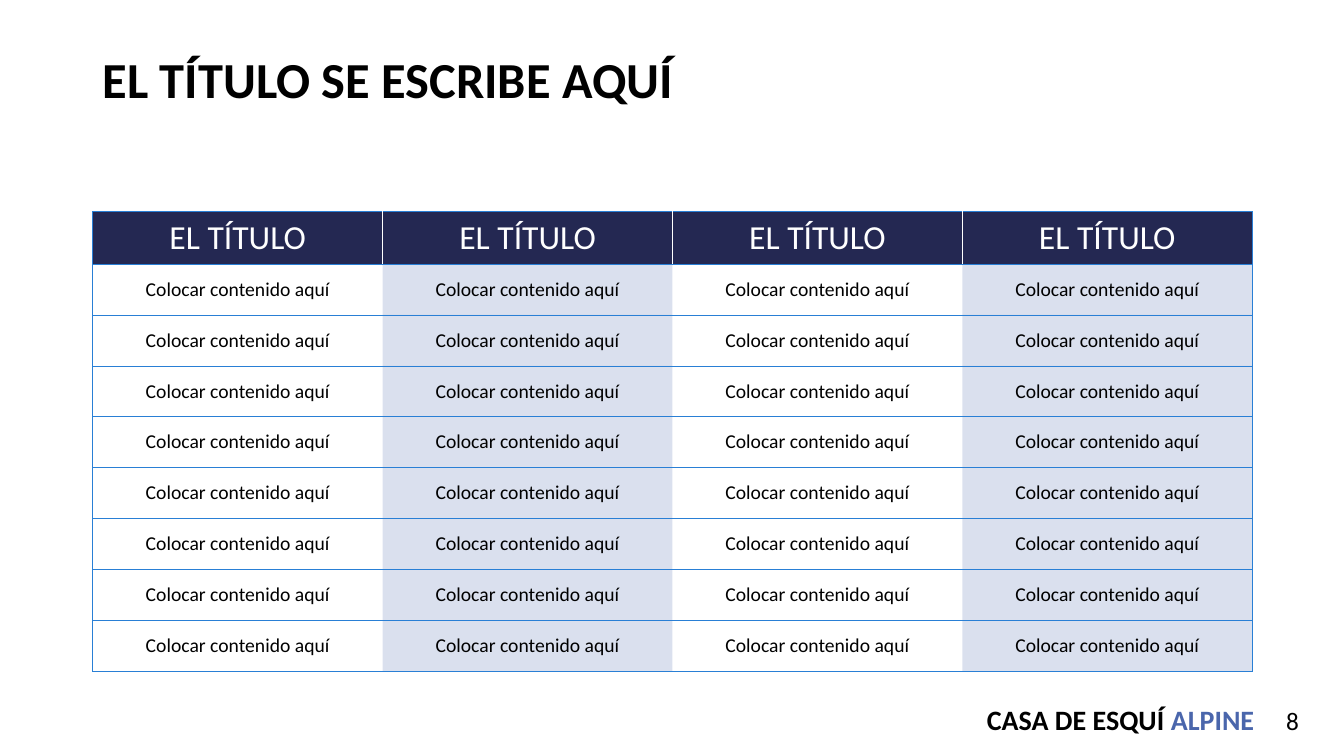
import dataclasses

import pptx
import pptx.dml.color
import pptx.enum.text
import pptx.oxml
import pptx.oxml.ns
import pptx.util

Inches = pptx.util.Inches
Pt = pptx.util.Pt
Align = pptx.enum.text.PP_ALIGN
Anchor = pptx.enum.text.MSO_ANCHOR


@dataclasses.dataclass(frozen=True)
class Theme:
    font: str = "Calibri"
    text: str = "000000"
    light: str = "FFFFFF"
    accent: str = "4A66AC"
    header: str = "242852"
    rule: str = "297FD5"
    tint_percent: int = 20
    title_size: int = 36
    header_size: int = 24
    brand_size: int = 20
    number_size: int = 18
    body_size: int = 14


THEME = Theme()
COLUMNS = 4
BODY_ROWS = 8


def rgb(value):
    return pptx.dml.color.RGBColor.from_string(value)


def add_span(para, text, size, color=THEME.text, bold=False):
    span = para.add_run()
    span.text = text
    formats = {"name": THEME.font, "size": Pt(size), "bold": bold}
    for name, value in formats.items():
        setattr(span.font, name, value)
    span.font.color.rgb = rgb(color)


def add_text_box(page, box, spans, **formats):
    """Place one paragraph made of (text, size, color, bold) spans."""
    frame = page.shapes.add_textbox(*map(Inches, box)).text_frame
    alignment = formats.pop("alignment", Align.LEFT)
    for name, value in {"word_wrap": True, **formats}.items():
        setattr(frame, name, value)
    para = frame.paragraphs[0]
    para.alignment = alignment
    for span in spans:
        add_span(para, *span)
    return para


def add_title(page, box):
    para = add_text_box(
        page, box,
        [("EL TÍTULO SE ESCRIBE AQUÍ", THEME.title_size, THEME.text, True)],
        vertical_anchor=Anchor.MIDDLE)
    para.line_spacing = 0.9


def set_border(cell, side, color=None, width=0.5):
    """Draw one side (L, R, T or B) of a cell, or clear it without a color."""
    paint = "<a:noFill/>"
    if color:
        paint = f'<a:solidFill><a:srgbClr val="{color}"/></a:solidFill>'
    namespace = pptx.oxml.ns.nsdecls("a")
    cell._tc.get_or_add_tcPr().append(pptx.oxml.parse_xml(
        f'<a:ln{side} {namespace} w="{Pt(width)}">{paint}</a:ln{side}>'))


def set_borders(cell, row, column):
    inner = (THEME.light, 1) if row == 0 else (None,)
    outer = (THEME.rule,)
    set_border(cell, "L", *(outer if column == 0 else inner))
    set_border(cell, "R", *(outer if column == COLUMNS - 1 else inner))
    set_border(cell, "T", *outer)
    set_border(cell, "B", *outer)


def fill_cell(cell, row, column):
    if row > 0 and column % 2 == 0:
        cell.fill.background()
        return
    cell.fill.solid()
    cell.fill.fore_color.rgb = rgb(THEME.header if row == 0 else THEME.accent)
    if row > 0:
        color = cell._tc.tcPr.find(".//" + pptx.oxml.ns.qn("a:solidFill") + "[last()]/")
        for color in cell._tc.tcPr.findall(pptx.oxml.ns.qn("a:solidFill")):
            color[0].append(pptx.oxml.parse_xml(
                f'<a:alpha {pptx.oxml.ns.nsdecls("a")} val="{THEME.tint_percent * 1000}"/>'))


def add_content_table(page, box, header_height=0.52):
    left, top, width, height = box
    table = page.shapes.add_table(
        BODY_ROWS + 1, COLUMNS, *map(Inches, box)).table
    table.first_row = table.horz_banding = False
    for column in table.columns:
        column.width = Inches(width / COLUMNS)
    for index, row in enumerate(table.rows):
        body_height = (height - header_height) / BODY_ROWS
        row.height = Inches(header_height if index == 0 else body_height)
        for column, cell in enumerate(row.cells):
            formats = {
                "vertical_anchor": Anchor.MIDDLE,
                "margin_left": Inches(0.07), "margin_right": Inches(0.07),
                "margin_top": Inches(0.04), "margin_bottom": Inches(0.04),
            }
            for name, value in formats.items():
                setattr(cell, name, value)
            set_borders(cell, index, column)
            fill_cell(cell, index, column)
            para = cell.text_frame.paragraphs[0]
            para.alignment = Align.CENTER
            if index == 0:
                add_span(para, "EL TÍTULO", THEME.header_size, THEME.light)
            else:
                add_span(para, "Colocar contenido aquí", THEME.body_size)


def add_footer(page, box):
    left, top, width, height = box
    inset = Inches(0.02)
    add_text_box(
        page, (left, top, 2.72, 0.38),
        [("CASA DE ESQUÍ ", THEME.brand_size, THEME.text, True),
         ("ALPINE", THEME.brand_size, THEME.accent, True)],
        alignment=Align.RIGHT, vertical_anchor=Anchor.MIDDLE, word_wrap=False,
        margin_left=inset, margin_right=inset,
        margin_top=inset, margin_bottom=inset)
    add_text_box(page, (left + width - 3, top, 3, height),
                 [("8", THEME.number_size)], alignment=Align.RIGHT)


def add_table_page(deck):
    page = deck.slides.add_slide(deck.slide_layouts[6])
    add_title(page, (0.92, 0.47, 11.5, 0.7))
    add_content_table(page, (0.92, 2.1, 11.5, 4.56))
    add_footer(page, (9.74, 6.95, 3.24, 0.4))


def main():
    deck = pptx.Presentation()
    deck.slide_width = Inches(13.33)
    deck.slide_height = Inches(7.5)
    add_table_page(deck)
    deck.save("out.pptx")


if __name__ == "__main__":
    main()
